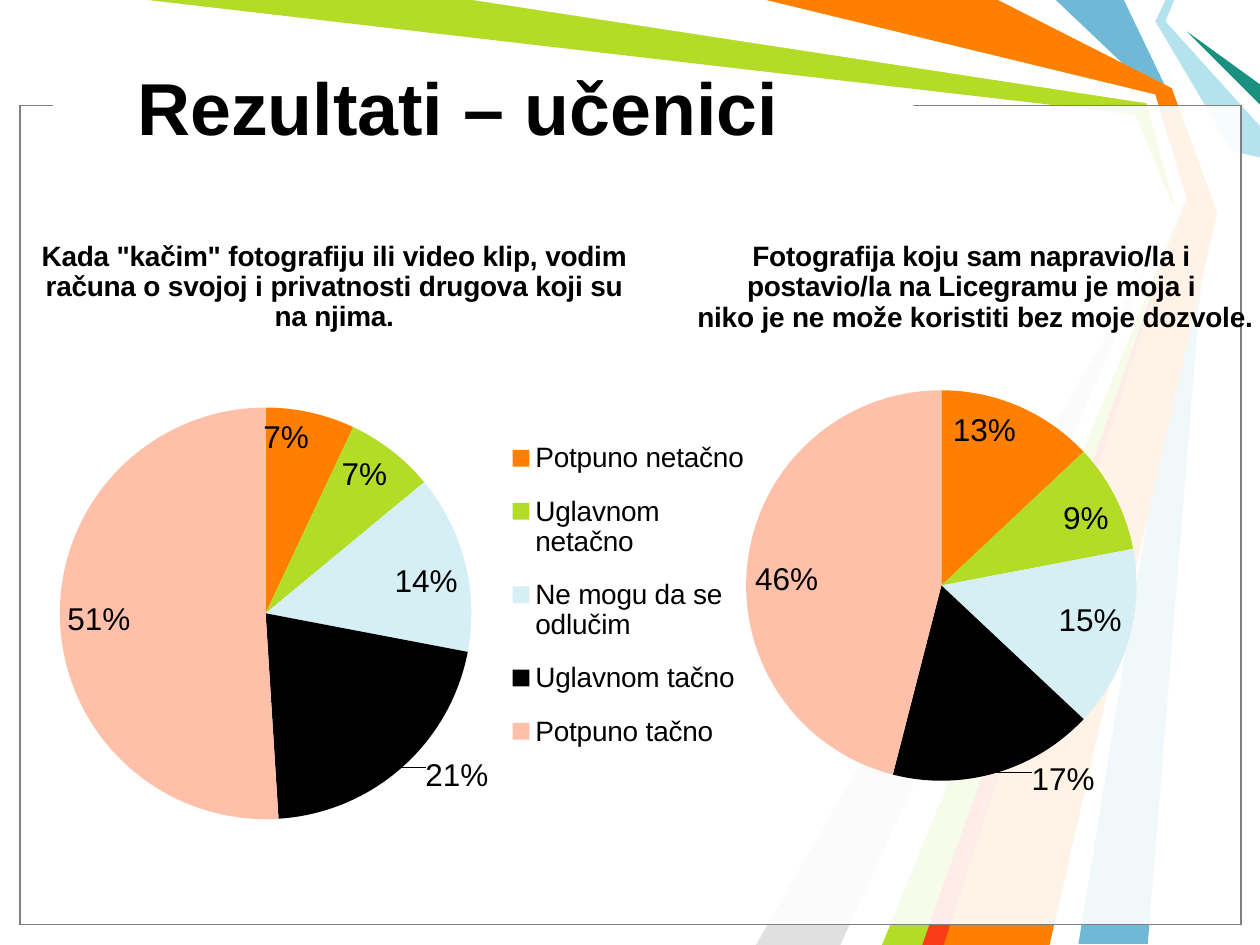
from lxml import etree
from pptx import Presentation
from pptx.chart.data import CategoryChartData
from pptx.dml.color import RGBColor
from pptx.enum.chart import XL_CHART_TYPE, XL_LABEL_POSITION, XL_LEGEND_POSITION
from pptx.enum.shapes import MSO_SHAPE
from pptx.enum.text import MSO_ANCHOR
from pptx.oxml import parse_xml
from pptx.oxml.ns import nsdecls, qn
from pptx.util import Inches, Pt

PIE = XL_CHART_TYPE.PIE
IN_END = XL_LABEL_POSITION.INSIDE_END
RIGHT = XL_LEGEND_POSITION.RIGHT
RECT = MSO_SHAPE.RECTANGLE
MIDDLE = MSO_ANCHOR.MIDDLE

FONT = "Arial"
COLORS = {
    "black": "000000", "white": "FFFFFF", "grey": "808080", "silver": "E0E0E0",
    "blue": "6FB9D7", "lime": "B3DC27", "aqua": "B4E3EE", "teal": "189180",
    "orange": "FF7F00", "red": "F93D17", "ice": "D6EFF5", "peach": "FFC0AA",
}
SLICES = ["orange", "lime", "ice", "black", "peach"]
DARK = SLICES.index("black")
ANSWERS = ["Potpuno netačno", "Uglavnom netačno", "Ne mogu da se odlučim",
           "Uglavnom tačno", "Potpuno tačno"]
CLIP = ('Kada "kačim" fotografiju ili video klip, vodim računa o svojoj i '
        "privatnosti drugova koji su na njima.")
PHOTO = ("Fotografija koju sam napravio/la i \npostavio/la na Licegramu je moja i \n"
         "niko je ne može koristiti bez moje dozvole.")

RIBBONS = [
    ("blue", [(8.92, 0), (9.29, 0.77), (9.58, 1.67), (9.11, 7.49), (8.56, 7.49),
              (9.5, 1.67), (9.17, 0.75), (8.38, 0)]),
    ("lime", [(1.17, 0), (3.83, 0), (9.14, 0.78), (9.42, 1.69), (7.42, 7.5),
              (6.92, 7.5), (9.35, 1.73), (9.01, 0.91)]),
    ("silver", [(6.67, 7.5), (9.27, 1.81), (6, 7.5)]),
    ("white", [(3.75, 0), (9.1, 0.82), (9.32, 1.62), (6.75, 7.5), (7, 7.5),
               (9.41, 1.58), (9.17, 0.75), (6, 0)]),
    ("aqua", [(9.25, 0), (9.17, 0.17), (9.78, 1.2), (10, 1.25), (10, 1),
              (9.25, 0.17), (9.32, 0)]),
    ("teal", [(10, 0.83), (9.42, 0.25), (10, 0.67)]),
    ("orange", [(6.08, 0), (7.92, 0), (9.3, 0.7), (9.66, 1.69), (8.33, 7.5),
                (7.33, 7.5), (9.42, 1.58), (9.17, 0.75)]),
    ("red", [(7.32, 7.5), (9.32, 1.83), (7.49, 7.5)]),
]


def rgb(name):
    return RGBColor.from_string(COLORS[name])


def paint(shape, fill, line=None, alpha=None):
    shape.shadow.inherit = False
    shape.fill.solid()
    shape.fill.fore_color.rgb = rgb(fill)
    if alpha:
        tone = shape.fill._xPr.find(".//" + qn("a:srgbClr"))
        etree.SubElement(tone, qn("a:alpha")).set("val", str(alpha * 1000))
    if line:
        shape.line.color.rgb = rgb(line)
        shape.line.width = Pt(0.75)
    else:
        shape.line.fill.background()


def style(font, size, bold=False):
    font.name, font.size, font.bold = FONT, Pt(size), bold
    font.color.rgb = rgb("black")


def add_ribbons(slide):
    for color, points in RIBBONS:
        spots = [(Inches(x), Inches(y)) for x, y in points]
        path = slide.shapes.build_freeform(*spots[0], scale=1.0)
        path.add_line_segments(spots[1:], close=True)
        paint(path.convert_to_shape(), color)


def add_frame(slide, box):
    """Two veils over the ribbons, with a gap in the top edge for the title."""
    for line in ("black", "grey"):
        paint(slide.shapes.add_shape(RECT, *map(Inches, box)), "white", line, 69)
    gap = (box[0] + 0.26, box[1] - 0.1, 6.83, 0.17)
    paint(slide.shapes.add_shape(RECT, *map(Inches, gap)), "white")


def add_title(slide, box):
    frame = slide.shapes.add_textbox(*map(Inches, box)).text_frame
    frame.word_wrap = True
    frame.vertical_anchor = MIDDLE
    frame.text = "Rezultati – učenici"
    style(frame.paragraphs[0].runs[0].font, 42, True)


def layout(x, y, w=None, h=None, target=None, mode="edge"):
    """Manual chart layout, in fractions of the chart."""
    parts = [f'<c:layoutTarget val="{target}"/>'] if target else []
    if mode:
        parts += [f'<c:{axis}Mode val="{mode}"/>' for axis in "xy"]
    sizes = zip("xywh", (x, y, w, h))
    parts += [f'<c:{key} val="{val}"/>' for key, val in sizes if val is not None]
    return parse_xml(f'<c:layout {nsdecls("c")}><c:manualLayout>{"".join(parts)}'
                     "</c:manualLayout></c:layout>")


def place(node, after, new):
    """Put a layout in a chart part, behind the named child or first."""
    for old in node.findall(qn("c:layout")):
        node.remove(old)
    prior = node.find(qn(after)) if after else None
    if prior is None:
        node.insert(0, new)
    else:
        prior.addnext(new)


def add_labels(series, shift):
    labels = series.data_labels
    labels.show_percentage, labels.show_value = True, False
    labels.number_format, labels.number_format_is_linked = "0%", False
    labels.position = IN_END
    style(labels.font, 18)
    label = series.points[DARK].data_label
    style(label.font, 18)
    label.position = IN_END
    node = series._element.find(".//" + qn("c:dLbl"))
    node.find(qn("c:showVal")).set("val", "0")
    node.find(qn("c:showPercent")).set("val", "1")
    place(node, "c:idx", layout(*shift, mode=None))


def add_pie(slide, box, head, head_at, values, plot, shift, cats, legend=None):
    data = CategoryChartData()
    data.categories = cats
    data.add_series(head.replace("\n", ""), values)
    chart = slide.shapes.add_chart(PIE, *map(Inches, box), data).chart
    style(chart.font, 18)

    chart.has_title = True
    title = chart.chart_title
    title.text_frame.text = head
    for para in title.text_frame.paragraphs:
        style(para.runs[0].font, 16, True)
    title.include_in_layout = False
    place(title._element, "c:tx", layout(*head_at))

    chart.plots[0].vary_by_categories = True
    series = chart.plots[0].series[0]
    for spot, color in enumerate(SLICES):
        fill = series.points[spot].format.fill
        fill.solid()
        fill.fore_color.rgb = rgb(color)
    add_labels(series, shift)
    area = chart._chartSpace.find(".//" + qn("c:plotArea"))
    place(area, None, layout(*plot, target="inner"))

    chart.has_legend = legend is not None
    if legend:
        chart.legend.position = RIGHT
        chart.legend.include_in_layout = False
        style(chart.legend.font, 16)
        place(chart.legend._element, "c:legendPos", layout(*legend))


def main():
    deck = Presentation()
    deck.slide_width, deck.slide_height = Inches(10), Inches(7.5)
    slide = deck.slides.add_slide(deck.slide_layouts[6])
    add_ribbons(slide)
    add_frame(slide, (0.16, 0.84, 9.69, 6.5))
    add_title(slide, (0.99, 0.22, 6.89, 1.25))
    add_pie(slide, (0.23, 1.8, 6.06, 4.95), CLIP, (0.01, 0.01), (7, 7, 14, 21, 51),
            (0.04, 0.29, 0.54, 0.66), (0.12, 0.05), ANSWERS, (0.63, 0.31, 0.31, 0.56))
    add_pie(slide, (4.37, 1.72, 6.67, 4.92), PHOTO, (0.17, 0.03), (13, 9, 15, 17, 46),
            (0.23, 0.28, 0.47, 0.63), (0.12, 0.05), range(1, 6))
    deck.save("out.pptx")


if __name__ == "__main__":
    main()
